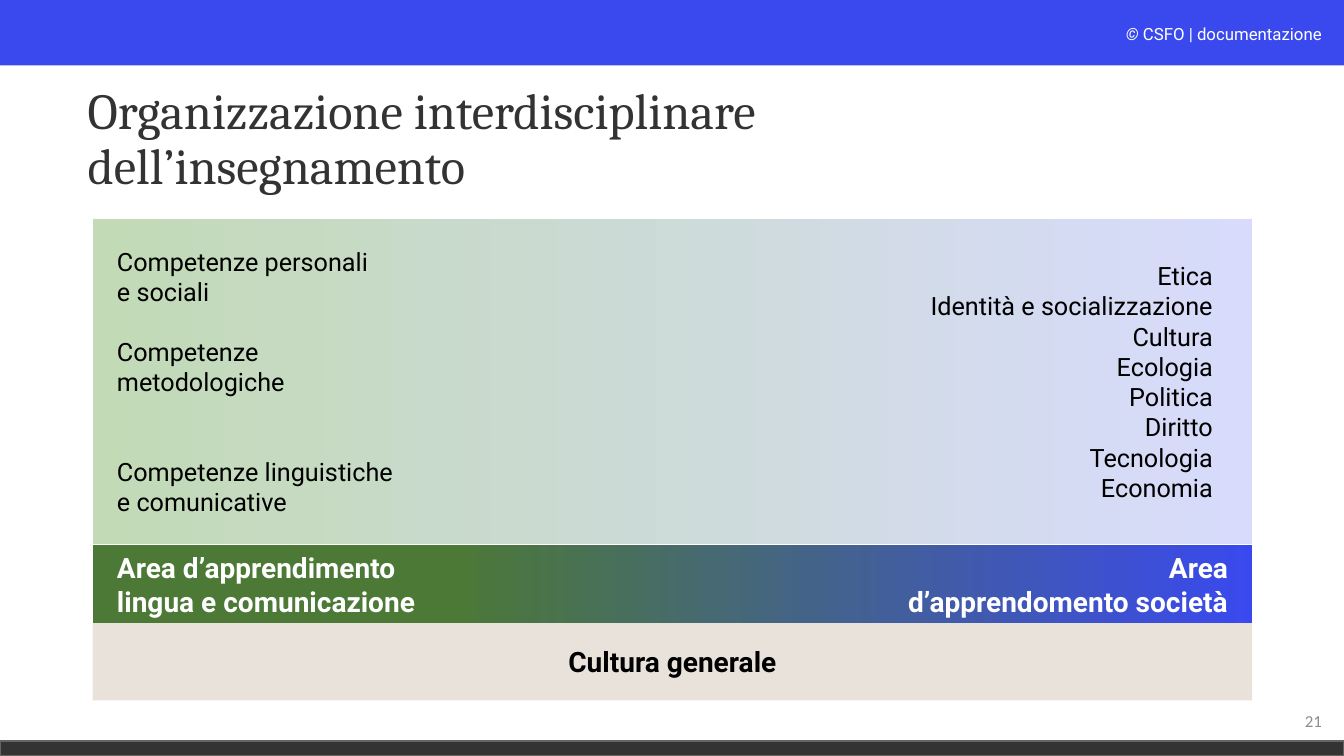
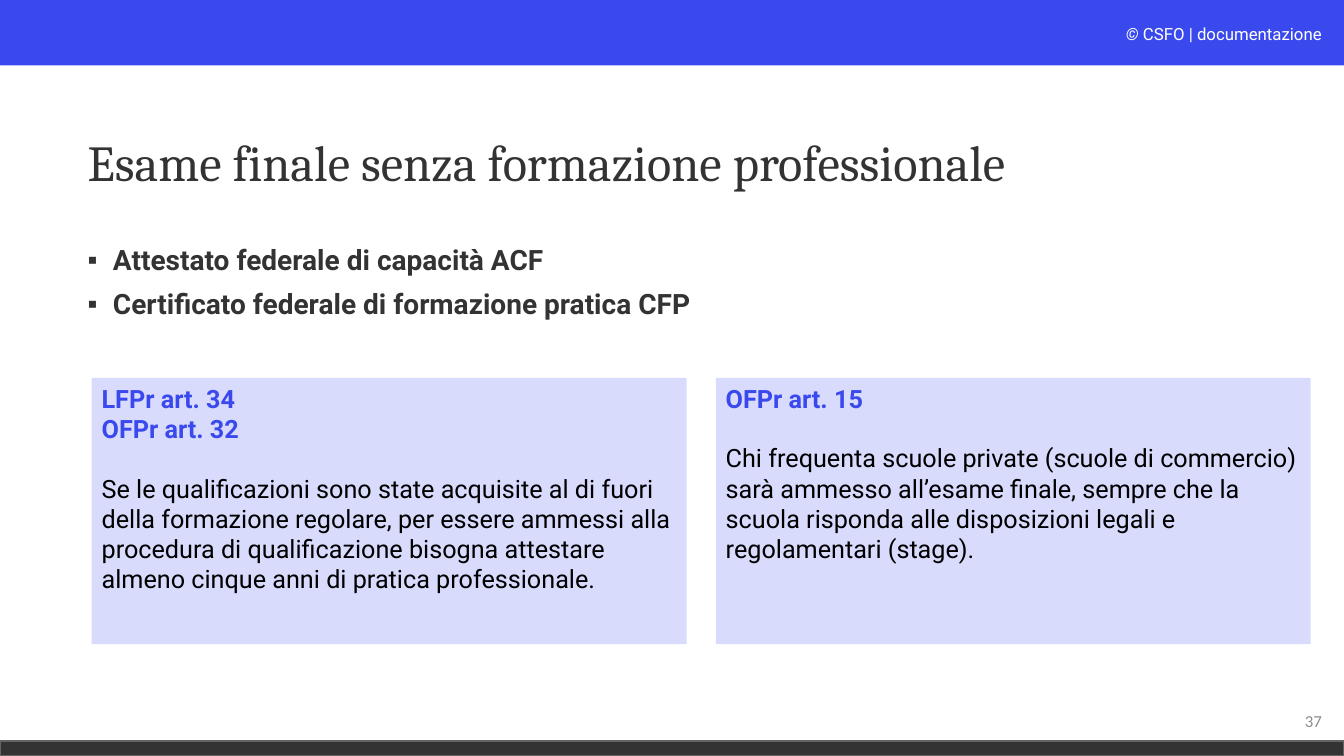
"""Two slides on general education and final examinations, with shared bands and titles."""
from lxml import etree
from pptx import Presentation
from pptx.dml.color import RGBColor
from pptx.enum import shapes, text
from pptx.oxml import ns
from pptx.util import Inches, Pt

BLUE = RGBColor(0x3A, 0x49, 0xEE)
PALE_BLUE = RGBColor(0xD8, 0xDB, 0xFC)
GREEN = RGBColor(0x4C, 0x79, 0x36)
PALE_GREEN = RGBColor(0xC2, 0xDA, 0xB6)
SAND = RGBColor(0xE8, 0xE2, 0xDB)
DARK = RGBColor(0x33, 0x33, 0x33)
EDGE = RGBColor(0x66, 0x63, 0x60)
GREY = RGBColor(0x8C, 0x8C, 0x8C)
BLACK = RGBColor(0, 0, 0)
WHITE = RGBColor(0xFF, 0xFF, 0xFF)
LEFT, CENTER, RIGHT = text.PP_ALIGN.LEFT, text.PP_ALIGN.CENTER, text.PP_ALIGN.RIGHT
TOP, MIDDLE = text.MSO_ANCHOR.TOP, text.MSO_ANCHOR.MIDDLE
LINE_GAP = 21.1


def add_box(slide, left, top, width, height, *colours, first_stop=0):
    """Add a text box, a filled rectangle or one with a two-colour gradient."""
    area = [Inches(length) for length in (left, top, width, height)]
    if not colours:
        return slide.shapes.add_textbox(*area)
    shape = slide.shapes.add_shape(shapes.MSO_SHAPE.RECTANGLE, *area)
    shape.shadow.inherit = False
    shape.line.fill.background()
    if len(colours) == 1:
        shape.fill.solid()
        shape.fill.fore_color.rgb = colours[0]
    else:
        shape.fill.gradient()
        shape.fill.gradient_angle = 0
        for stop, colour, position in zip(shape.fill.gradient_stops, colours, (first_stop, 1)):
            stop.color.rgb = colour
            stop.position = position
    return shape


def write(shape, lines, size, colour, bold=False, font="Roboto", align=LEFT, anchor=MIDDLE, insets=(0.1, 0.1)):
    """Write lines given as text, or as text with space before, colour and weight."""
    frame = shape.text_frame
    frame.word_wrap = True
    frame.auto_size = text.MSO_AUTO_SIZE.NONE
    frame.vertical_anchor = anchor
    frame.margin_left, frame.margin_right = [Inches(inset) for inset in insets]
    for index, line in enumerate(lines):
        words, space, line_colour, line_bold = (line, 0, colour, bold) if isinstance(line, str) else line
        paragraph = frame.paragraphs[0] if index == 0 else frame.add_paragraph()
        paragraph.alignment = align
        paragraph.space_before = Pt(space)
        run = paragraph.add_run()
        run.text = words
        run.font.name = font
        run.font.size = Pt(size)
        run.font.bold = line_bold
        run.font.color.rgb = line_colour
    return frame


presentation = Presentation()
presentation.slide_width = Inches(13.33)
presentation.slide_height = Inches(7.5)

pages = [
    (5, "Organizzazione interdisciplinare dell’insegnamento", 0.67, 8.82, "21"),
    (1, "Esame finale senza formazione professionale", 0.91, 11.5, "37"),
]
for layout, title, top, width, number in pages:
    slide = presentation.slides.add_slide(presentation.slide_layouts[layout])
    heading = slide.shapes.title
    heading.left, heading.top, heading.width, heading.height = [
        Inches(length) for length in (0.77, top, width, 1.45)]
    write(heading, [title], 36, DARK, font="Cambria").paragraphs[0].line_spacing = 0.9
    write(add_box(slide, 10.21, 6.95, 3, 0.4), [number], 12, GREY, font="Calibri", align=RIGHT)
teaching, examination = presentation.slides

header = add_box(teaching, 0, 0, 13.33, 0.65, BLUE)
footer = add_box(teaching, 0, 7.35, 13.33, 0.15, DARK)
footer.line.color.rgb = EDGE
footer.line.width = Pt(1)
copyright_box = add_box(teaching, 8.62, 0.19, 4.59, 0.3)
credit = write(copyright_box, ["© "], 12, WHITE, align=RIGHT, anchor=TOP).paragraphs[0]
credit.runs[0].font.italic = True
owner = credit.add_run()
owner.text = "CSFO | documentazione"
owner.font.name = "Roboto"
owner.font.size = Pt(12)
owner.font.color.rgb = WHITE
for index, shape in enumerate((header, footer, copyright_box)):
    shape.element.nvSpPr.cNvPr.set("id", str(100 + index))
    presentation.slide_master.element.cSld.spTree.insert(2 + index, shape.element)

culture = add_box(teaching, 0.92, 6.18, 11.5, 0.77, SAND)
write(culture, ["Cultura generale"], 20, BLACK, bold=True, align=CENTER)
areas = add_box(teaching, 0.92, 5.41, 11.5, 0.77, GREEN, BLUE, first_stop=0.31)
write(areas, ["Area d’apprendimento", "lingua e comunicazione"], 20, WHITE, bold=True, insets=(0.24, 0.1))
society = add_box(teaching, 7.89, 5.41, 4.53, 0.77)
write(society, ["Area", "d’apprendomento società"], 20, WHITE, bold=True, align=RIGHT, insets=(0.1, 0.24))
skills = add_box(teaching, 0.92, 2.17, 11.5, 3.23, PALE_GREEN, PALE_BLUE)
write(skills, [
    "Competenze personali", "e sociali",
    ("Competenze", LINE_GAP, BLACK, False), "metodologiche",
    ("Competenze linguistiche", 2 * LINE_GAP, BLACK, False), "e comunicative",
], 18, BLACK, insets=(0.24, 0.1))
topics = add_box(teaching, 7.74, 2.17, 4.53, 3.23)
write(topics, [
    "Etica", "Identità e socializzazione", "Cultura", "Ecologia",
    "Politica", "Diritto", "Tecnologia", "Economia",
], 18, BLACK, align=RIGHT, insets=(0.1, 0.24))

certificates = examination.placeholders[1]
certificates.left, certificates.top, certificates.width, certificates.height = [
    Inches(length) for length in (0.77, 2.39, 11.5, 4.44)]
frame = write(certificates, [
    "Attestato federale di capacità ACF",
    ("Certificato federale di formazione pratica CFP", 10, DARK, True),
], 20, DARK, bold=True, anchor=TOP)
for paragraph in frame.paragraphs:
    paragraph.line_spacing = 0.9
    properties = paragraph._p.get_or_add_pPr()
    properties.set("marL", str(Inches(0.25)))
    properties.set("indent", str(Inches(-0.25)))
    etree.SubElement(properties, ns.qn("a:buChar"), char="▪")

articles = [
    (["LFPr art. 34", "OFPr art. 32"],
     "Se le qualificazioni sono state acquisite al di fuori della formazione regolare, per essere ammessi "
     "alla procedura di qualificazione bisogna attestare almeno cinque anni di pratica professionale."),
    (["OFPr art. 15"],
     "Chi frequenta scuole private (scuole di commercio) sarà ammesso all’esame finale, sempre che la scuola "
     "risponda alle disposizioni legali e regolamentari (stage)."),
]
for column, (references, rule) in enumerate(articles):
    card = add_box(examination, 0.91 + 6.19 * column, 3.75, 5.9, 2.64, PALE_BLUE)
    write(card, references + [(rule, LINE_GAP, BLACK, False)], 18, BLUE, bold=True, anchor=TOP)

presentation.save("out.pptx")
